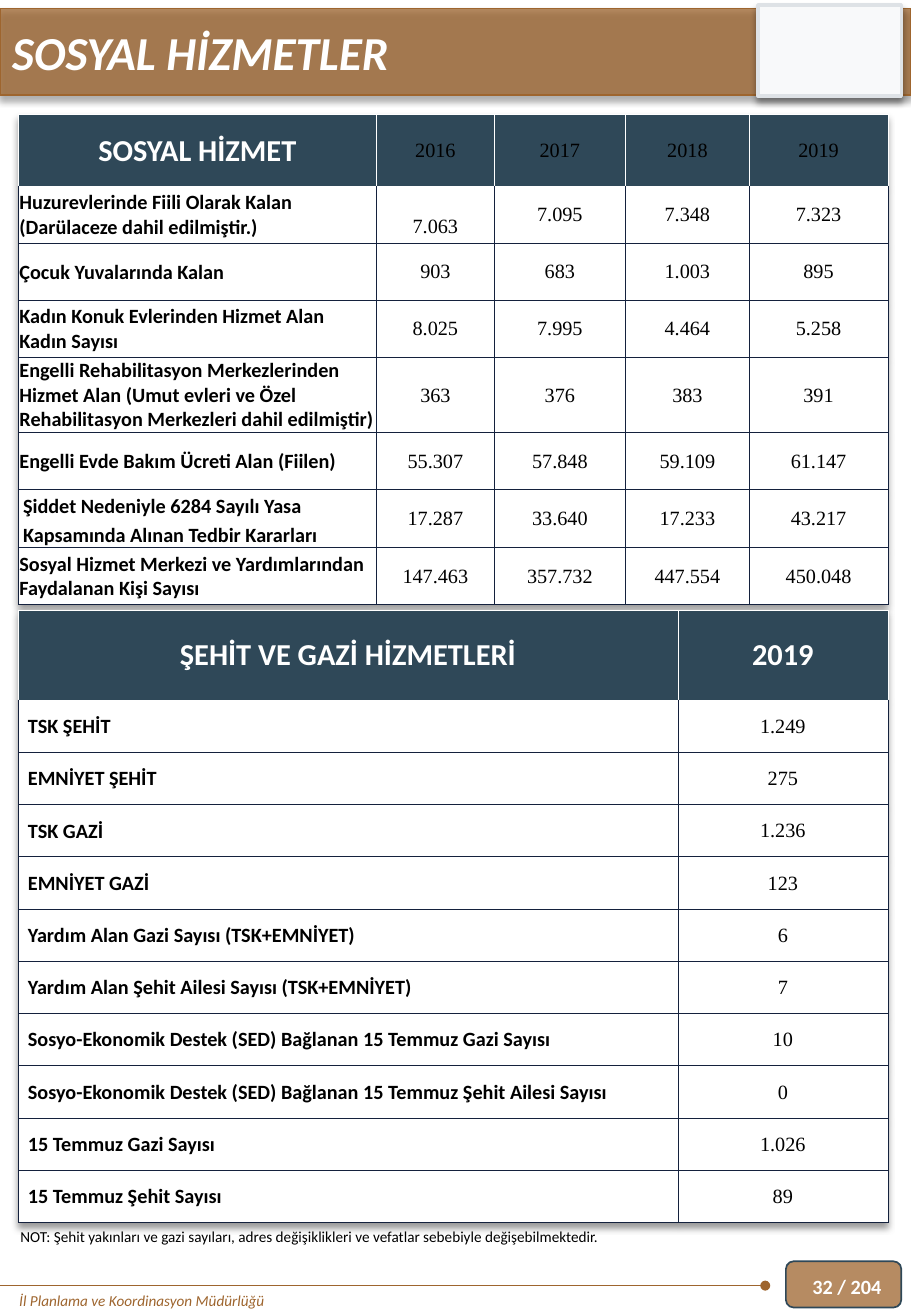
import dataclasses
from typing import Any

import lxml.etree
import pptx
import pptx.dml.color
import pptx.enum.shapes
import pptx.enum.text
import pptx.oxml.ns
import pptx.util

UNITS_PER_INCH = 100
UNIT = pptx.util.Inches(1) // UNITS_PER_INCH
SLIDE_COLS, SLIDE_ROWS = 750, 1083
BROWN, SLATE, NAVY, WHITE, BLACK = "9E652E", "2F4858", "14213D", "FFFFFF", "000000"
SHAPE = pptx.enum.shapes.MSO_SHAPE
CENTER = pptx.enum.text.PP_ALIGN.CENTER
LEFT = pptx.enum.text.PP_ALIGN.LEFT
MIDDLE = pptx.enum.text.MSO_ANCHOR.MIDDLE
TOP = pptx.enum.text.MSO_ANCHOR.TOP
qn = pptx.oxml.ns.qn

HEADING = dict(name="Calibri", size=18, color=WHITE, bold=True)
LABEL = dict(name="Calibri", size=12, color=BLACK, bold=True)
NUMBER = dict(name="Times New Roman", size=12, color=BLACK, bold=False)
TITLE = dict(name="Calibri", size=28, color=WHITE, bold=True, italic=True)
FOOTER = dict(name="Calibri", size=9, color=BROWN, italic=True)
NOTE = dict(name="Calibri", size=9, color=BLACK)
PAGE = dict(name="Calibri", size=12, color=WHITE, bold=True)


@dataclasses.dataclass
class Area:
    col: int
    row: int
    cols: int
    rows: int

    def emu(self) -> list[int]:
        return [n * UNIT for n in dataclasses.astuple(self)]


@dataclasses.dataclass
class Panel:
    area: Area
    kind: Any
    fill: str
    line: str
    width: float
    alpha: int = 100
    shadow: bool = True


@dataclasses.dataclass
class Caption:
    area: Area
    text: str
    style: dict
    anchor: Any = TOP


@dataclasses.dataclass
class Grid:
    area: Area
    cols: list[int]
    head: int
    body: int
    year_style: dict
    label_inset: int
    rows: list[list[str]]


PANELS = [
    Panel(Area(647, 1038, 95, 38), SHAPE.ROUNDED_RECTANGLE, BROWN, SLATE, 1, 75, False),
    Panel(Area(0, 7, 750, 71), SHAPE.RECTANGLE, BROWN, BROWN, 1, 75),
    Panel(Area(624, 4, 118, 75), SHAPE.RECTANGLE, "F8F9FA", "DEE2E6", 2),
]
CAPTIONS = [
    Caption(Area(6, 1058, 469, 25), "İl Planlama ve Koordinasyon Müdürlüğü", FOOTER),
    Caption(Area(7, 1005, 662, 25), "NOT: Şehit yakınları ve gazi sayıları, adres değişiklikleri "
            "ve vefatlar sebebiyle değişebilmektedir.", NOTE),
    Caption(Area(659, 1038, 115, 42), "32 / 204", PAGE, MIDDLE),
]
SOCIAL = Grid(Area(15, 94, 716, 403), [295, 97, 108, 102, 114], 59, 47, NUMBER, 1, [
    ["SOSYAL HİZMET", "2016", "2017", "2018", "2019"],
    ["Huzurevlerinde Fiili Olarak Kalan (Darülaceze dahil edilmiştir.)",
     "7.063", "7.095", "7.348", "7.323"],
    ["Çocuk Yuvalarında Kalan", "903", "683", "1.003", "895"],
    ["Kadın Konuk Evlerinden Hizmet Alan Kadın Sayısı", "8.025", "7.995", "4.464", "5.258"],
    ["Engelli Rehabilitasyon Merkezlerinden Hizmet Alan (Umut evleri ve Özel "
     "Rehabilitasyon Merkezleri dahil edilmiştir)", "363", "376", "383", "391"],
    ["Engelli Evde Bakım Ücreti Alan (Fiilen)", "55.307", "57.848", "59.109", "61.147"],
    ["Şiddet Nedeniyle 6284 Sayılı Yasa Kapsamında Alınan Tedbir Kararları",
     "17.287", "33.640", "17.233", "43.217"],
    ["Sosyal Hizmet Merkezi ve Yardımlarından Faydalanan Kişi Sayısı",
     "147.463", "357.732", "447.554", "450.048"],
])
VETERANS = Grid(Area(15, 502, 716, 503), [543, 173], 74, 43, HEADING, 8, [
    ["ŞEHİT VE GAZİ HİZMETLERİ", "2019"],
    ["TSK ŞEHİT", "1.249"],
    ["EMNİYET ŞEHİT", "275"],
    ["TSK GAZİ", "1.236"],
    ["EMNİYET GAZİ", "123"],
    ["Yardım Alan Gazi Sayısı (TSK+EMNİYET)", "6"],
    ["Yardım Alan Şehit Ailesi Sayısı (TSK+EMNİYET)", "7"],
    ["Sosyo-Ekonomik Destek (SED) Bağlanan 15 Temmuz Gazi Sayısı", "10"],
    ["Sosyo-Ekonomik Destek (SED) Bağlanan 15 Temmuz Şehit Ailesi Sayısı", "0"],
    ["15 Temmuz Gazi Sayısı", "1.026"],
    ["15 Temmuz Şehit Sayısı", "89"],
])


def rgb(code: str) -> pptx.dml.color.RGBColor:
    return pptx.dml.color.RGBColor.from_string(code)


def node(parent: Any, tag: str, **attrs: Any) -> Any:
    return lxml.etree.SubElement(parent, qn(tag), {k: str(v) for k, v in attrs.items()})


def write(tf: Any, text: str, style: dict, align: Any = LEFT) -> Any:
    p = tf.paragraphs[0]
    p.alignment = align
    r = p.add_run()
    r.text = text
    for key, value in style.items():
        if key == "color":
            r.font.color.rgb = rgb(value)
        else:
            setattr(r.font, key, pptx.util.Pt(value) if key == "size" else value)
    return p


def add_shadow(effects: Any) -> None:
    shadow = node(effects, "a:outerShdw", blurRad=pptx.util.Pt(4), dist=pptx.util.Pt(3),
                  dir=90 * 60000, algn="t", rotWithShape=0)
    node(node(shadow, "a:srgbClr", val=BLACK), "a:alpha", val=40000)


def add_panel(s: Any, panel: Panel) -> None:
    sp = s.shapes.add_shape(panel.kind, *panel.area.emu())
    sp.fill.solid()
    sp.fill.fore_color.rgb = rgb(panel.fill)
    sp.line.color.rgb = rgb(panel.line)
    sp.line.width = pptx.util.Pt(panel.width)
    sp.shadow.inherit = False
    if panel.alpha < 100:
        node(sp.element.spPr.find(qn("a:solidFill"))[0], "a:alpha", val=panel.alpha * 1000)
    if panel.shadow:
        add_shadow(sp.element.spPr.find(qn("a:effectLst")))


def add_caption(s: Any, caption: Caption) -> None:
    tf = s.shapes.add_textbox(*caption.area.emu()).text_frame
    tf.word_wrap = True
    tf.vertical_anchor = caption.anchor
    write(tf, caption.text, caption.style)


def add_footer_line(s: Any) -> None:
    kind = pptx.enum.shapes.MSO_CONNECTOR.STRAIGHT
    line = s.shapes.add_connector(kind, 630 * UNIT, 1058 * UNIT, 0, 1058 * UNIT)
    line.line.color.rgb = rgb(BROWN)
    line.line.width = pptx.util.Pt(0.5)
    node(line.element.spPr.find(qn("a:ln")), "a:headEnd", type="oval")
    node(line.element.spPr, "a:effectLst")


def add_borders(props: Any, colors: dict[str, str]) -> None:
    for i, (side, color) in enumerate(colors.items()):
        ln = node(props, f"a:ln{side}", w=pptx.util.Pt(0.25))
        node(node(ln, "a:solidFill"), "a:srgbClr", val=color)
        props.insert(i, ln)


def add_grid(s: Any, grid: Grid) -> Any:
    frame = s.shapes.add_table(len(grid.rows), len(grid.cols), *grid.area.emu())
    table = frame.table
    for column, width in zip(table.columns, grid.cols):
        column.width = width * UNIT
    for i, row in enumerate(table.rows):
        row.height = (grid.body if i else grid.head) * UNIT
    for k, (cell, tc) in enumerate(zip(table.iter_cells(), frame.element.iter(qn("a:tc")))):
        i, j = divmod(k, len(grid.cols))
        style = (NUMBER if j else LABEL) if i else (grid.year_style if j else HEADING)
        inset = (1 if j else grid.label_inset) * UNIT
        margins = dict(margin_left=inset, margin_right=inset, margin_top=UNIT, margin_bottom=0)
        for key, value in margins.items():
            setattr(cell, key, value)
        cell.vertical_anchor = MIDDLE
        cell.fill.solid()
        cell.fill.fore_color.rgb = rgb(WHITE if i else SLATE)
        edge = NAVY if i else WHITE
        add_borders(tc.get_or_add_tcPr(),
                    dict(L=edge, R=edge, T=NAVY if i > 1 else WHITE, B=edge))
        write(cell.text_frame, grid.rows[i][j], style, LEFT if i and not j else CENTER)
    props = next(frame.element.iter(qn("a:tblPr")))
    effects = node(props, "a:effectLst")
    props.insert(0, effects)
    add_shadow(effects)
    return table


def add_title(s: Any) -> None:
    title = s.shapes.title
    place = zip(("left", "top", "width", "height"), Area(0, 14, 750, 57).emu())
    for key, value in place:
        setattr(title, key, value)
    title.text_frame.vertical_anchor = MIDDLE
    write(title.text_frame, "SOSYAL HİZMETLER", TITLE)
    s.shapes.element.append(title.element)


def main() -> None:
    prs = pptx.Presentation()
    prs.slide_width, prs.slide_height = SLIDE_COLS * UNIT, SLIDE_ROWS * UNIT
    s = prs.slides.add_slide(prs.slide_layouts[5])
    for panel in PANELS:
        add_panel(s, panel)
    add_footer_line(s)
    social = add_grid(s, SOCIAL)
    social.cell(1, 1).margin_top = 20 * UNIT
    violence = social.cell(6, 0)
    violence.margin_left = violence.margin_right = 4 * UNIT
    violence.text_frame.paragraphs[0].line_spacing = 1.15
    add_grid(s, VETERANS)
    add_title(s)
    for caption in CAPTIONS:
        add_caption(s, caption)
    prs.save("out.pptx")


if __name__ == "__main__":
    main()
